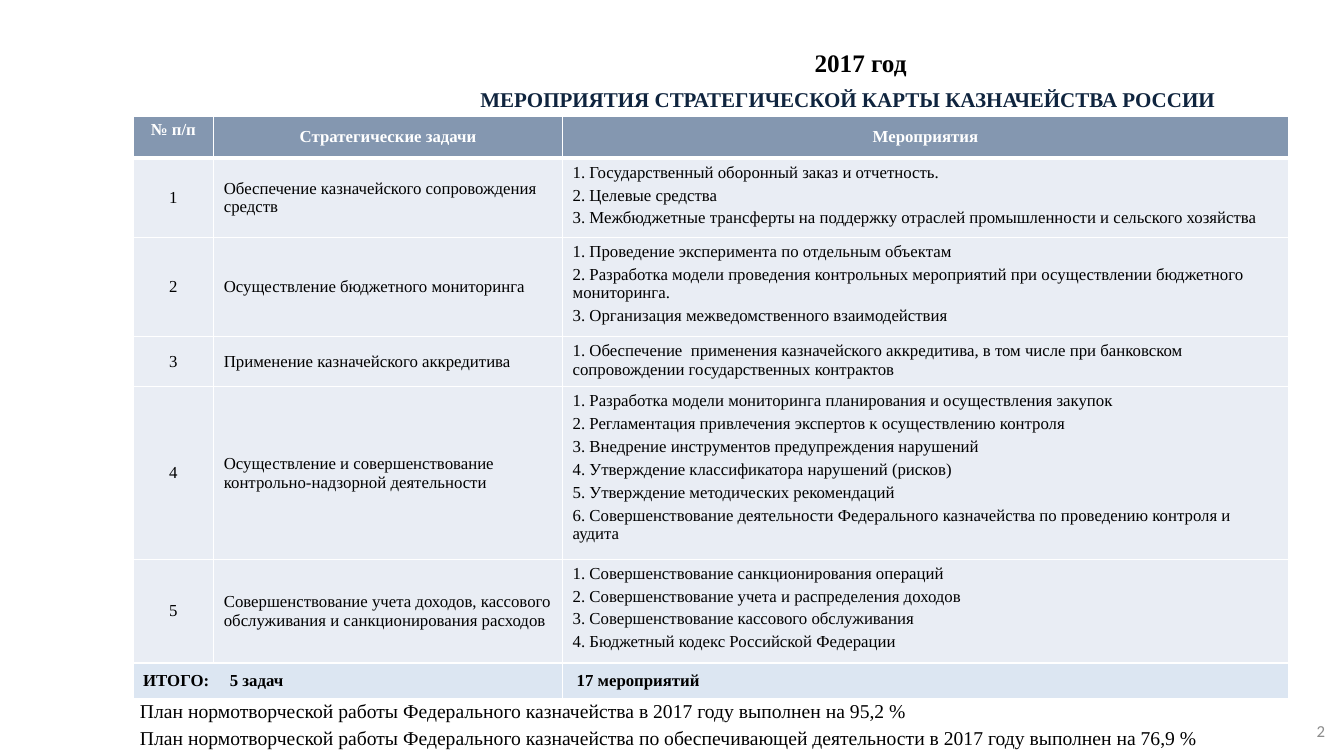
from dataclasses import dataclass

from lxml.etree import SubElement
from pptx import Presentation
from pptx.dml.color import RGBColor
from pptx.enum.text import MSO_ANCHOR, MSO_AUTO_SIZE, PP_ALIGN
from pptx.oxml.ns import qn
from pptx.util import Inches, Pt


@dataclass(frozen=True)
class Theme:
    serif: str = "Times New Roman"
    sans: str = "Calibri"
    black: str = "000000"
    white: str = "FFFFFF"
    navy: str = "0F243E"
    grey: str = "8C8C8C"
    header_fill: str = "8497B0"
    body_fill: str = "E9EDF4"
    total_fill: str = "DCE6F2"
    year_size: int = 18
    title_size: int = 15
    note_size: int = 14
    table_size: int = 12
    number_size: int = 12


class SlideBuilder:
    def __init__(self, page, theme):
        self.page = page
        self.theme = theme

    def fill_text(self, frame, lines, size, color=None, bold=False,
                  align=PP_ALIGN.LEFT, after=0, font=None):
        for index, line in enumerate(lines):
            para = frame.paragraphs[0] if index == 0 else frame.add_paragraph()
            para.text = line
            para.alignment = align
            para.space_before = Pt(0)
            para.space_after = Pt(after)
            para.font.name = font or self.theme.serif
            para.font.size = Pt(size)
            para.font.bold = bold
            para.font.color.rgb = RGBColor.from_string(color or self.theme.black)

    def title(self, text, area):
        box = self.page.shapes.title
        box.left, box.top, box.width, box.height = [Inches(value) for value in area]
        frame = box.text_frame
        frame.word_wrap = True
        frame.auto_size = MSO_AUTO_SIZE.NONE
        frame.vertical_anchor = MSO_ANCHOR.TOP
        frame.margin_left = frame.margin_right = Inches(0.09)
        frame.margin_top = frame.margin_bottom = Inches(0.04)
        self.fill_text(frame, [text], self.theme.title_size, self.theme.navy,
                       bold=True, align=PP_ALIGN.CENTER)

    def text(self, lines, area, size, anchor=MSO_ANCHOR.MIDDLE, wrap=True, **style):
        box = self.page.shapes.add_textbox(*[Inches(value) for value in area])
        frame = box.text_frame
        frame.word_wrap = wrap
        frame.vertical_anchor = anchor
        self.fill_text(frame, lines, size, **style)

    def table(self, area, widths, heights):
        shape = self.page.shapes.add_table(
            len(heights), len(widths), *[Inches(value) for value in area])
        table = shape.table
        table.first_row = table.horz_banding = False
        for column, width in zip(table.columns, widths):
            column.width = Inches(width)
        for row, height in zip(table.rows, heights):
            row.height = Inches(height)
        return table

    def cell(self, cell, lines, fill, anchor=MSO_ANCHOR.MIDDLE, bottom=1, **style):
        cell.vertical_anchor = anchor
        self.borders(cell, bottom)
        cell.fill.solid()
        cell.fill.fore_color.rgb = RGBColor.from_string(fill)
        self.fill_text(cell.text_frame, lines, self.theme.table_size, **style)

    def borders(self, cell, bottom):
        properties = cell._tc.get_or_add_tcPr()
        for side, width in (("L", 1), ("R", 1), ("T", 1), ("B", bottom)):
            line = SubElement(properties, qn(f"a:ln{side}"), w=str(Pt(width)))
            solid = SubElement(line, qn("a:solidFill"))
            SubElement(solid, qn("a:srgbClr"), val=self.theme.white)

    def tab_stop(self, para, position):
        tabs = SubElement(para._p.get_or_add_pPr(), qn("a:tabLst"))
        SubElement(tabs, qn("a:tab"), pos=str(Inches(position)), algn="l")


HEADERS = ["№ п/п", "Стратегические задачи", "Мероприятия"]
TASKS = [
    ("Обеспечение казначейского сопровождения средств", [
        "Государственный оборонный заказ и отчетность.",
        "Целевые средства",
        "Межбюджетные трансферты на поддержку отраслей промышленности и сельского хозяйства",
    ]),
    ("Осуществление бюджетного мониторинга", [
        "Проведение эксперимента по отдельным объектам",
        "Разработка модели проведения контрольных мероприятий при осуществлении "
        "бюджетного мониторинга.",
        "Организация межведомственного взаимодействия",
    ]),
    ("Применение казначейского аккредитива", [
        "Обеспечение  применения казначейского аккредитива, в том числе при банковском "
        "сопровождении государственных контрактов",
    ]),
    ("Осуществление и совершенствование контрольно-надзорной деятельности", [
        "Разработка модели мониторинга планирования и осуществления закупок",
        "Регламентация привлечения экспертов к осуществлению контроля",
        "Внедрение инструментов предупреждения нарушений",
        "Утверждение классификатора нарушений (рисков)",
        "Утверждение методических рекомендаций",
        "Совершенствование деятельности Федерального казначейства по проведению "
        "контроля и аудита",
    ]),
    ("Совершенствование учета доходов, кассового обслуживания и санкционирования расходов", [
        "Совершенствование санкционирования операций",
        "Совершенствование учета и распределения доходов",
        "Совершенствование кассового обслуживания",
        "Бюджетный кодекс Российской Федерации",
    ]),
]
NOTES = [
    "План нормотворческой работы Федерального казначейства в 2017 году выполнен на 95,2 %",
    "План нормотворческой работы Федерального казначейства по обеспечивающей деятельности "
    "в 2017 году выполнен на 76,9 %",
]


def main():
    deck = Presentation()
    deck.slide_width, deck.slide_height = Inches(13.33), Inches(7.5)
    page = deck.slides.add_slide(deck.slide_layouts[5])
    theme = Theme()
    builder = SlideBuilder(page, theme)

    # Heading and slide number
    builder.title("МЕРОПРИЯТИЯ СТРАТЕГИЧЕСКОЙ КАРТЫ КАЗНАЧЕЙСТВА РОССИИ",
                  (4.03, 0.82, 8.76, 0.34))
    builder.text(["2"], (12.96, 7.1, 0.28, 0.29), theme.number_size,
                 color=theme.grey, align=PP_ALIGN.RIGHT, font=theme.sans)

    # Table header
    table = builder.table((1.32, 1.15, 11.46, 5.77), [0.8, 3.46, 7.2],
                          [0.42, 0.78, 0.98, 0.5, 1.71, 1.03, 0.35])
    for column, header in enumerate(HEADERS):
        builder.cell(table.cell(0, column), [header], theme.header_fill,
                     anchor=MSO_ANCHOR.MIDDLE if column else MSO_ANCHOR.TOP,
                     bottom=3, color=theme.white, bold=True, align=PP_ALIGN.CENTER)

    # Tasks and their measures
    for row, (task, measures) in enumerate(TASKS, start=1):
        numbered = [f"{number}. {text}" for number, text in enumerate(measures, start=1)]
        builder.cell(table.cell(row, 0), [str(row)], theme.body_fill,
                     align=PP_ALIGN.CENTER, after=3)
        builder.cell(table.cell(row, 1), [task], theme.body_fill, after=3)
        builder.cell(table.cell(row, 2), numbered, theme.body_fill,
                     anchor=MSO_ANCHOR.TOP, after=3)

    # Totals
    total_row = len(TASKS) + 1
    total, measure_total = table.cell(total_row, 0), table.cell(total_row, 2)
    total.merge(table.cell(total_row, 1))
    builder.tab_stop(total.text_frame.paragraphs[0], 0.86)
    builder.cell(total, ["ИТОГО:\t5 задач"], theme.total_fill, bold=True, after=3)
    builder.cell(measure_total, ["17 мероприятий"], theme.total_fill, bold=True, after=3)
    measure_total.margin_left = Inches(0.14)

    # Year and plan results
    builder.text(["2017 год"], (7.98, 0.42, 1.12, 0.4), theme.year_size,
                 anchor=MSO_ANCHOR.TOP, wrap=False, bold=True)
    builder.text(NOTES, (1.29, 6.95, 12.56, 0.47), theme.note_size, after=3)

    deck.save("out.pptx")


if __name__ == "__main__":
    main()
